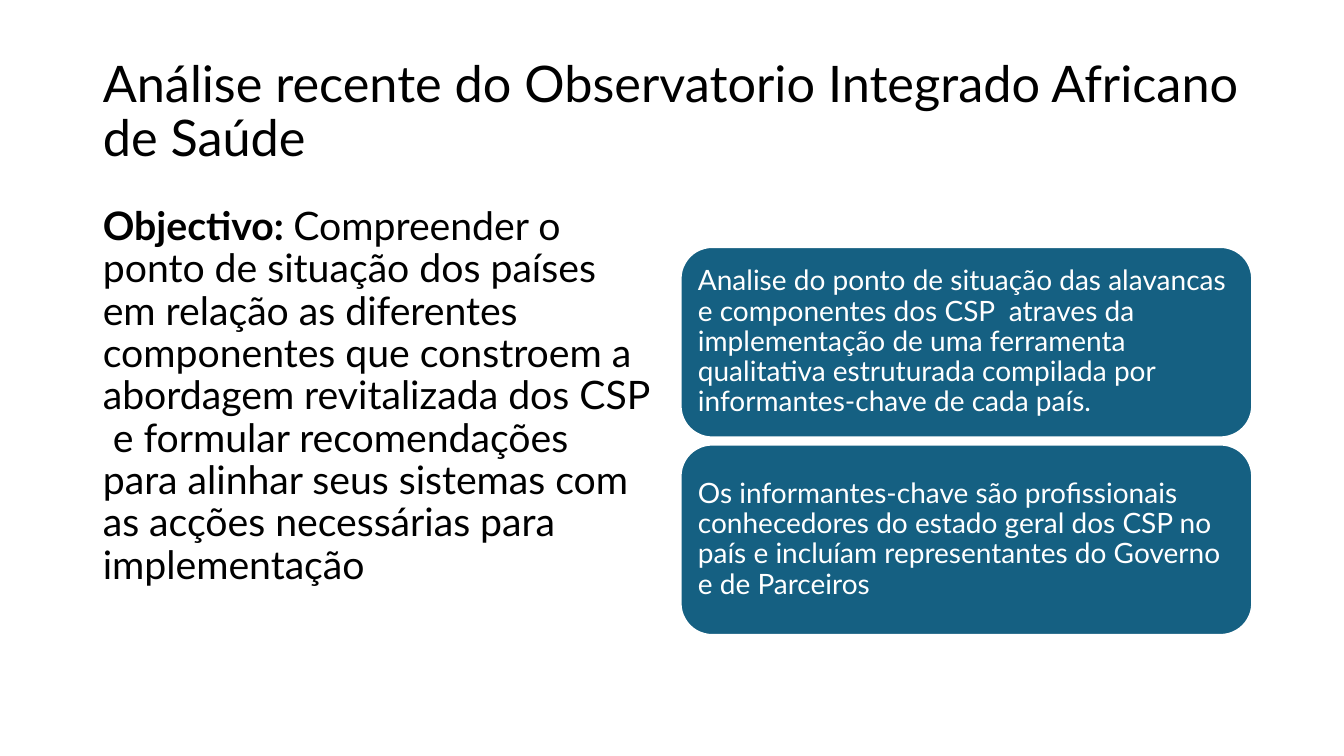
import dataclasses
import typing

import pptx
import pptx.dml.color
import pptx.enum.shapes
import pptx.enum.text
import pptx.oxml.ns
import pptx.util
from lxml import etree

PX = 9144  # EMU in one px, 100 px to the inch
HUES = {"ink": "000000", "card": "156082", "paper": "FFFFFF"}
MID = pptx.enum.text.MSO_ANCHOR.MIDDLE
TOP = pptx.enum.text.MSO_ANCHOR.TOP


@dataclasses.dataclass
class Box:
    left: int
    top: int
    width: int
    height: int

    def emu(self) -> list[int]:
        return [side * PX for side in dataclasses.astuple(self)]


@dataclasses.dataclass
class Style:
    size: int
    hue: str
    anchor: typing.Any


def tint(hue: str) -> pptx.dml.color.RGBColor:
    return pptx.dml.color.RGBColor.from_string(HUES[hue])


def apply(target: typing.Any, form: dict[str, typing.Any]) -> None:
    for name, value in form.items():
        setattr(target, name, value)


def place(shape: typing.Any, box: Box) -> None:
    apply(shape, dict(zip(("left", "top", "width", "height"), box.emu())))


def write(shape: typing.Any, parts: list[tuple[str, bool]], style: Style) -> None:
    frame = shape.text_frame
    apply(frame, {"word_wrap": True, "vertical_anchor": style.anchor,
                  "auto_size": pptx.enum.text.MSO_AUTO_SIZE.NONE})
    para = frame.paragraphs[0]
    apply(para, {"alignment": pptx.enum.text.PP_ALIGN.LEFT, "line_spacing": 0.9,
                 "space_before": pptx.util.Pt(0)})
    for text, bold in parts:
        run = para.add_run()
        run.text = text
        apply(run.font, {"name": "Lato", "size": pptx.util.Pt(style.size), "bold": bold})
        run.font.color.rgb = tint(style.hue)


def plain(shape: typing.Any) -> None:
    """Drop the bullet and its indent."""
    props = shape.text_frame.paragraphs[0]._p.get_or_add_pPr()
    props.set("marL", "0")
    props.set("indent", "0")
    etree.SubElement(props, pptx.oxml.ns.qn("a:buNone"))


def card(slide: typing.Any, box: Box, text: str) -> None:
    kind = pptx.enum.shapes.MSO_SHAPE.ROUNDED_RECTANGLE
    shape = slide.shapes.add_shape(kind, *box.emu())
    shape.shadow.inherit = False
    shape.fill.solid()
    shape.fill.fore_color.rgb = tint("card")
    shape.line.color.rgb = tint("paper")
    shape.line.width = pptx.util.Pt(1.5)
    sides = ("left", "top", "right", "bottom")
    apply(shape.text_frame, {f"margin_{side}": 8 * PX for side in sides})
    write(shape, [(text, False)], Style(20, "paper", MID))


CARDS = [
    "Analise do ponto de situação das alavancas e componentes dos CSP  atraves da "
    "implementação de uma ferramenta qualitativa estruturada compilada por "
    "informantes-chave de cada país.",
    "Os informantes-chave são profissionais  conhecedores do estado geral dos CSP no "
    "país e incluíam representantes do Governo e de Parceiros",
]
GOAL = [
    ("Objectivo: ", True),
    ("Compreender o ponto de situação dos países em relação as diferentes componentes "
     "que constroem a abordagem revitalizada dos CSP  e formular recomendações  para "
     "alinhar seus sistemas com as acções necessárias para implementação", False),
]


def main() -> None:
    deck = pptx.Presentation()
    apply(deck, {"slide_width": 1333 * PX, "slide_height": 750 * PX})
    slide = deck.slides.add_slide(deck.slide_layouts[1])

    # Title
    title = slide.shapes.title
    place(title, Box(92, 40, 1150, 145))
    head = "Análise recente do Observatorio Integrado Africano de Saúde"
    write(title, [(head, False)], Style(36, "ink", MID))

    # Goal on the left
    body = slide.placeholders[1]
    place(body, Box(92, 200, 567, 476))
    plain(body)
    write(body, GOAL, Style(28, "ink", TOP))

    # Cards on the right
    for row, text in enumerate(CARDS):
        card(slide, Box(675, 245 + row * 196, 567, 189), text)

    deck.save("out.pptx")


if __name__ == "__main__":
    main()
